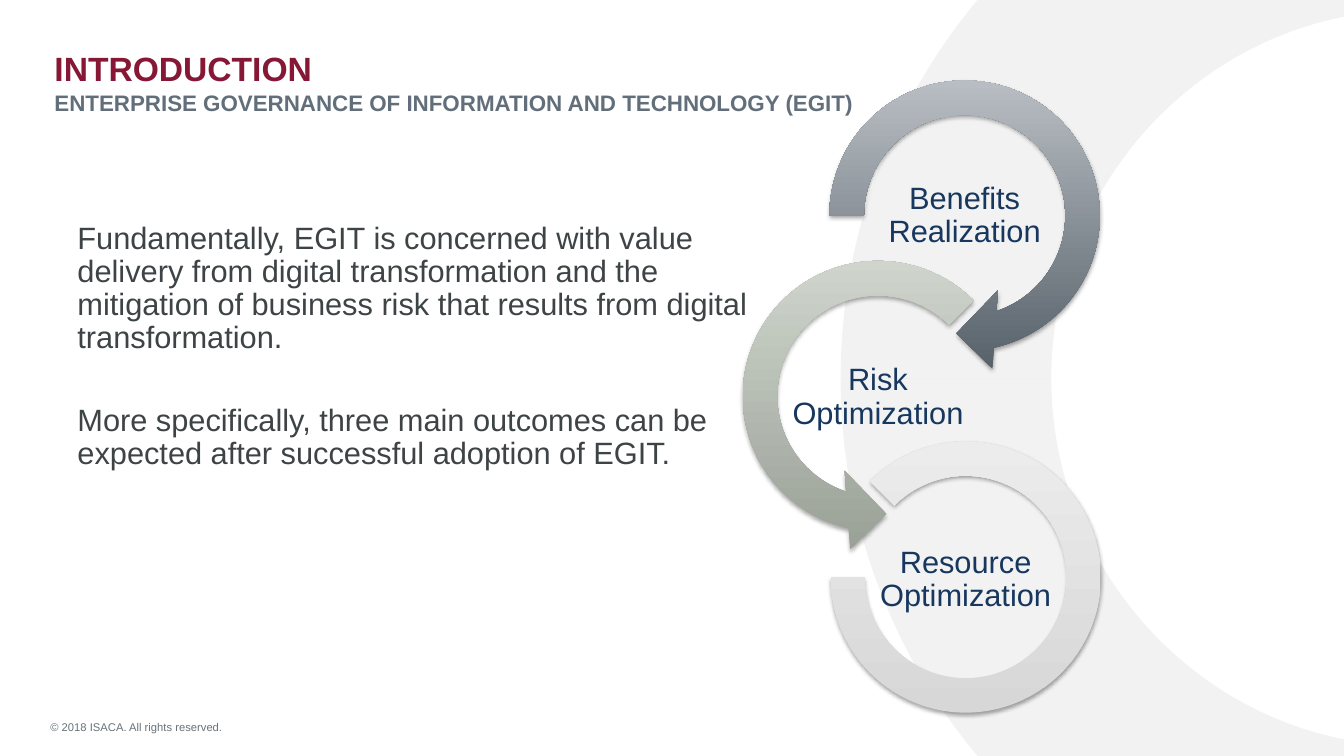
from dataclasses import dataclass

from lxml import etree
from pptx import Presentation
from pptx.dml.color import RGBColor
from pptx.enum.shapes import MSO_SHAPE
from pptx.enum.text import MSO_ANCHOR, MSO_AUTO_SIZE, PP_ALIGN
from pptx.oxml import parse_xml
from pptx.oxml.ns import nsdecls, qn
from pptx.util import Inches, Pt

TOP, MIDDLE = MSO_ANCHOR.TOP, MSO_ANCHOR.MIDDLE
LEFT, CENTER = PP_ALIGN.LEFT, PP_ALIGN.CENTER
NO_FIT = MSO_AUTO_SIZE.NONE
TITLE_ONLY = 5
ARC_HANDLE = 0.55  # Bezier handle length of a quarter ellipse, per radius


@dataclass(frozen=True)
class Theme:
    font: str = "Arial"
    ring: str = "BFBFBF"
    ring_alpha: int = 20
    title: str = "861836"
    subtitle: str = "626F7A"
    body: str = "3E4446"
    label: str = "17375E"
    footer: str = "687278"
    title_size: int = 24
    subtitle_size: int = 16
    body_size: int = 22
    footer_size: int = 8


THEME = Theme()

# shape, its box, adjustments, (bottom, top) colours, label, label left and top
OUTCOMES = [
    (MSO_SHAPE.CIRCULAR_ARROW, (8.01, 0.58, 3.12, 3.12),
     (0.11, 11.42, 45, 108, 0.125), ("566069", "C0C5CA"),
     "Benefits Realization", (8.7, 1.71)),
    (MSO_SHAPE.LEFT_CIRCULAR_ARROW, (7.15, 2.37, 3.12, 3.12),
     (0.11, 11.42, 63, 189, 0.125), ("99A096", "D3D9D0"),
     "Risk Optimization", (7.84, 3.51)),
    (MSO_SHAPE.BLOCK_ARC, (8.24, 4.38, 2.68, 2.69),
     (135, 108, 0.127), ("D7D7D7", "ECECEC"),
     "Resource Optimization", (8.71, 5.32)),
]
LABEL_SIZE = (1.74, 0.87)


def inches(box):
    return [Inches(v) for v in box]


def add_run(p, text, size, color, bold=False):
    r = p.add_run()
    r.text = text
    r.font.name = THEME.font
    r.font.size = Pt(size)
    r.font.bold = bold
    r.font.color.rgb = RGBColor.from_string(color)


def add_text(s, box, paragraphs, size, color, align=LEFT, anchor=TOP,
             insets=(0.1, 0.05), spacing=1.0, gap=0):
    """Add a wrapped text box; gap is the space in points between paragraphs."""
    tf = s.shapes.add_textbox(*inches(box)).text_frame
    tf.word_wrap = True
    tf.vertical_anchor = anchor
    tf.margin_left = tf.margin_right = Inches(insets[0])
    tf.margin_top = tf.margin_bottom = Inches(insets[1])
    for i, text in enumerate(paragraphs):
        p = tf.add_paragraph() if i else tf.paragraphs[0]
        p.alignment = align
        p.line_spacing = spacing
        if i:
            p.space_before = Pt(gap)
        add_run(p, text, size, color)


def curve_through(lines):
    """Turn three line segments into one Bezier curve with the same points."""
    curve = etree.Element(qn("a:cubicBezTo"))
    lines[0].addprevious(curve)
    for line in lines:
        curve.append(line[0])
        line.getparent().remove(line)


def add_quarter_ring(s, center, outer, inner, side):
    """Draw a quarter ring left of center; side 1 is below, -1 above."""
    def arc(radii):
        steps = [(1, 0), (1, ARC_HANDLE), (ARC_HANDLE, 1), (0, 1)]
        return [(Inches(center[0] - radii[0] * x),
                 Inches(center[1] + side * radii[1] * y)) for x, y in steps]

    points = arc(outer) + arc(inner)[::-1]
    builder = s.shapes.build_freeform(*points[0])
    builder.add_line_segments(points[1:], close=True)
    sp = builder.convert_to_shape()
    lines = list(sp.element.iter(qn("a:lnTo")))
    curve_through(lines[:3])
    curve_through(lines[4:7])
    sp.shadow.inherit = False
    sp.line.fill.background()
    sp.fill.solid()
    sp.fill.fore_color.rgb = RGBColor.from_string(THEME.ring)
    color = sp.element.spPr.find(qn("a:solidFill"))[0]
    etree.SubElement(color, qn("a:alpha"), val=str(THEME.ring_alpha * 1000))


def add_background(s):
    for side in (1, -1):
        add_quarter_ring(s, (14.01, 3.75), (5.67, 5.79), (3.58, 3.65), side)


def add_title(s, box, title, subtitle):
    sp = s.shapes.title
    sp.left, sp.top, sp.width, sp.height = inches(box)
    sp.element.getparent().append(sp.element)
    tf = sp.text_frame
    tf.word_wrap = True
    tf.auto_size = NO_FIT
    tf.vertical_anchor = TOP
    p = tf.paragraphs[0]
    p.alignment = LEFT
    add_run(p, title, THEME.title_size, THEME.title, bold=True)
    p.add_line_break()
    add_run(p, subtitle, THEME.subtitle_size, THEME.subtitle, bold=True)


def add_soft_shadow(sp):
    sp.shadow.inherit = False
    effects = sp.element.spPr.find(qn("a:effectLst"))
    effects.append(parse_xml(
        f'<a:outerShdw {nsdecls("a")} blurRad="{Pt(3.1)}" dist="{Pt(1.8)}" '
        'dir="5400000" rotWithShape="0"><a:srgbClr val="000000">'
        '<a:alpha val="35000"/></a:srgbClr></a:outerShdw>'))


def add_outcome(s, kind, box, adjustments, colors, label, label_at):
    sp = s.shapes.add_shape(kind, *inches(box))
    for i, value in enumerate(adjustments):
        sp.adjustments[i] = value
    sp.line.fill.background()
    sp.fill.gradient()
    sp.fill.gradient_angle = 90
    for stop, color in zip(sp.fill.gradient_stops, colors):
        stop.color.rgb = RGBColor.from_string(color)
    add_soft_shadow(sp)
    add_text(s, label_at + LABEL_SIZE, [label], THEME.body_size, THEME.label,
             align=CENTER, anchor=MIDDLE, insets=(0.02, 0.02), spacing=0.9)


def main():
    prs = Presentation()
    prs.slide_width, prs.slide_height = Inches(40 / 3), Inches(7.5)
    s = prs.slides.add_slide(prs.slide_layouts[TITLE_ONLY])
    add_background(s)
    add_text(s, (0.37, 7.08, 5.87, 0.27), ["© 2018 ISACA. All rights reserved."],
             THEME.footer_size, THEME.footer, insets=(0.13, 0.07))
    add_text(s, (0.67, 2.16, 6.85, 3.34), [
        "Fundamentally, EGIT is concerned with value delivery from digital "
        "transformation and the mitigation of business risk that results from "
        "digital transformation.",
        "More specifically, three main outcomes can be expected after "
        "successful adoption of EGIT.",
    ], THEME.body_size, THEME.body, spacing=0.9, gap=35)
    add_title(s, (0.44, 0.43, 8.3, 1.08), "INTRODUCTION",
              "ENTERPRISE GOVERNANCE OF INFORMATION AND TECHNOLOGY (EGIT)")
    for outcome in OUTCOMES:
        add_outcome(s, *outcome)
    prs.save("out.pptx")


if __name__ == "__main__":
    main()
